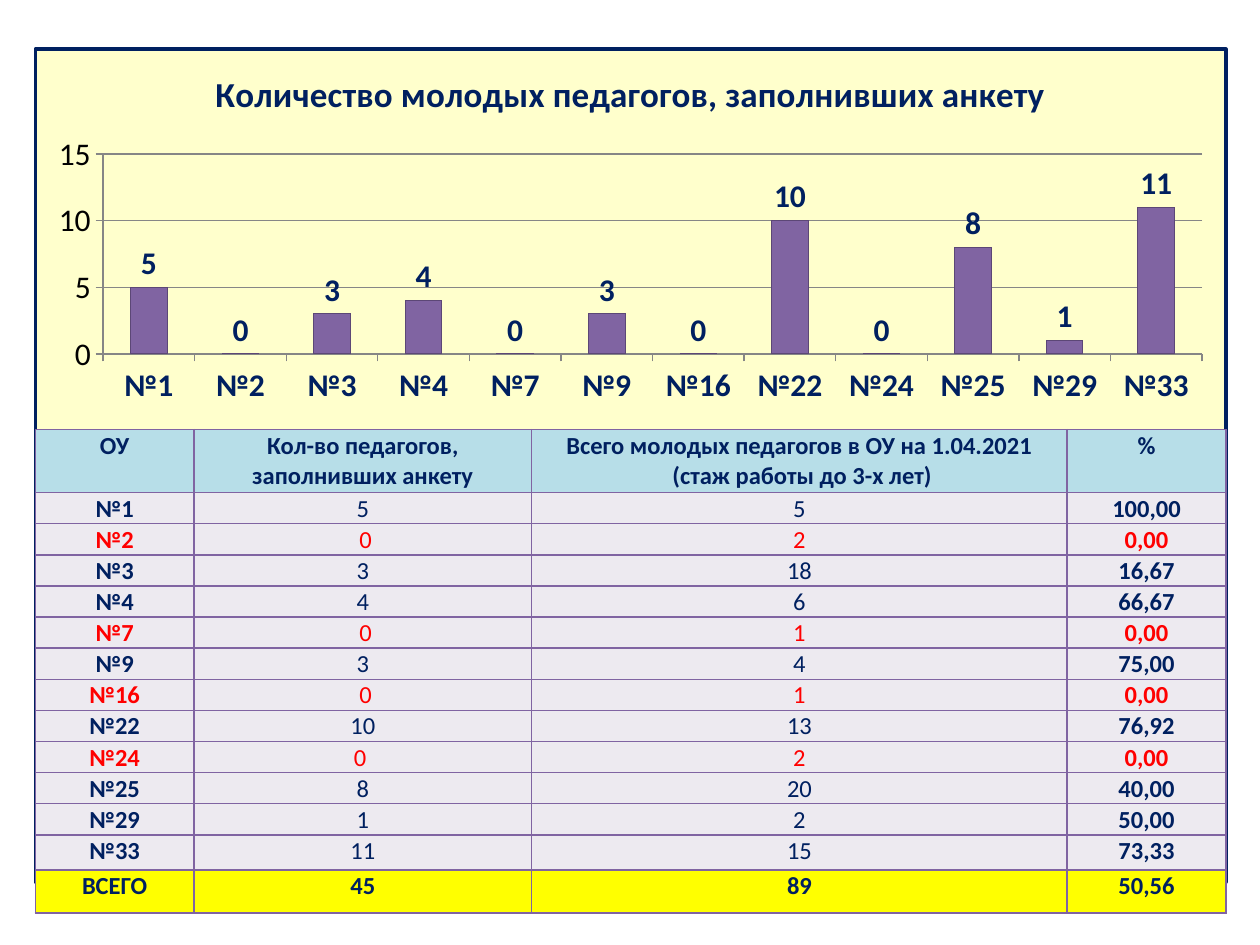
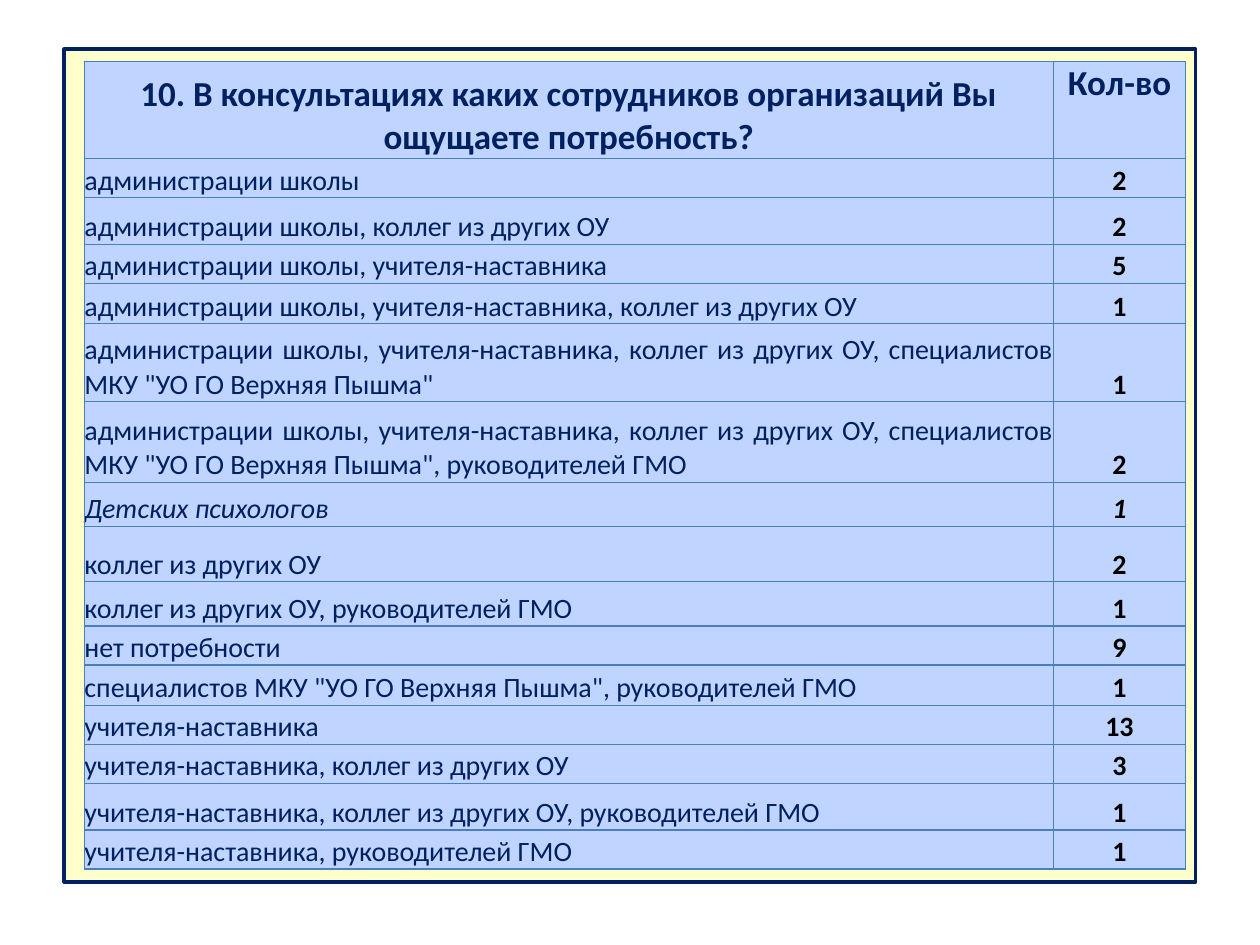
from lxml import etree
from pptx import Presentation
from pptx.chart.data import CategoryChartData
from pptx.dml.color import RGBColor
from pptx.enum import chart as charts, shapes, text
from pptx.oxml import ns
from pptx.util import Inches, Pt

FONT = "Calibri"
NAVY = RGBColor(0x00, 0x20, 0x60)
BLACK = RGBColor(0x00, 0x00, 0x00)
RED = RGBColor(0xFF, 0x00, 0x00)
CREAM = RGBColor(0xFF, 0xFF, 0xCC)
YELLOW = RGBColor(0xFF, 0xFF, 0x00)
HEADER_BLUE = RGBColor(0xB7, 0xDE, 0xE8)
PALE_LILAC = RGBColor(0xED, 0xEA, 0xF0)
PALE_BLUE = RGBColor(0xBF, 0xD5, 0xFF)
PURPLE = RGBColor(0x80, 0x64, 0xA2)
DARK_PURPLE = RGBColor(0x5C, 0x47, 0x76)
BORDER_BLUE = RGBColor(0x4B, 0x7E, 0xBC)
GRID_GREY = RGBColor(0x86, 0x86, 0x86)

CENTER = text.PP_ALIGN.CENTER
JUSTIFY = text.PP_ALIGN.JUSTIFY
TOP = text.MSO_ANCHOR.TOP
BOTTOM = text.MSO_ANCHOR.BOTTOM


def add_grid(page, left, top, widths, heights, border, border_width, inset):
    """Add a table with uniform borders and cell insets."""
    frame = page.shapes.add_table(
        len(heights), len(widths), Inches(left), Inches(top),
        Inches(sum(widths)), Inches(sum(heights)))
    table = frame.table
    table.first_row = table.horz_banding = False
    for column, width in zip(table.columns, widths):
        column.width = Inches(width)
    for row, height in zip(table.rows, heights):
        row.height = Inches(height)
    for cell in table.iter_cells():
        cell.margin_left = cell.margin_right = cell.margin_top = Inches(inset)
        cell.margin_bottom = 0
        properties = cell._tc.get_or_add_tcPr()
        for side in ("lnL", "lnR", "lnT", "lnB"):
            line = etree.SubElement(properties, ns.qn(f"a:{side}"), w=str(Pt(border_width)))
            solid = etree.SubElement(line, ns.qn("a:solidFill"))
            etree.SubElement(solid, ns.qn("a:srgbClr"), val=str(border))
    return table


def write_cell(cell, words, fill, size, color=NAVY, bold=False, italic=False,
               align=CENTER, anchor=TOP):
    cell.fill.solid()
    cell.fill.fore_color.rgb = fill
    cell.vertical_anchor = anchor
    for index, line in enumerate(words.split("\n")):
        paragraphs = cell.text_frame.paragraphs
        para = paragraphs[0] if index == 0 else cell.text_frame.add_paragraph()
        para.alignment = align
        span = para.add_run()
        span.text = line
        span.font.name = FONT
        span.font.size = Pt(size)
        span.font.bold = bold
        span.font.italic = italic
        span.font.color.rgb = color


deck = Presentation()
deck.slide_width, deck.slide_height = Inches(10), Inches(7.5)

# Both slides: cream panel with a navy frame
pages = []
for left, width in ((0.28, 9.45), (0.51, 8.98)):
    page = deck.slides.add_slide(deck.slide_layouts[6])
    panel = page.shapes.add_shape(
        shapes.MSO_SHAPE.RECTANGLE, Inches(left), Inches(0.39), Inches(width), Inches(6.61))
    panel.shadow.inherit = False
    panel.fill.solid()
    panel.fill.fore_color.rgb = CREAM
    panel.line.color.rgb = NAVY
    panel.line.width = Pt(2)
    pages.append(page)
survey_page, needs_page = pages

# Slide 1: schools table
schools = [
    ("№1", "5", "5", "100,00"),
    ("№2", " 0", "2", "0,00"),
    ("№3", "3", "18", "16,67"),
    ("№4", "4", "6", "66,67"),
    ("№7", " 0", "1", "0,00"),
    ("№9", "3", "4", "75,00"),
    ("№16", " 0", "1", "0,00"),
    ("№22", "10", "13", "76,92"),
    ("№24", "0 ", "2", "0,00"),
    ("№25", "8", "20", "40,00"),
    ("№29", "1", "2", "50,00"),
    ("№33", "11", "15", "73,33"),
]
headings = ("ОУ", "Кол-во педагогов, заполнивших анкету",
            "Всего молодых педагогов в ОУ на 1.04.2021\n (стаж работы до 3-х лет)", "%")
totals = ("ВСЕГО", "45", "89", "50,56")
school_table = add_grid(survey_page, 0.28, 3.41, (1.26, 2.68, 4.25, 1.26),
                        [0.5] + [0.24] * 11 + [0.28, 0.34], PURPLE, 1, 0.01)
for column in range(4):
    write_cell(school_table.cell(0, column), headings[column], HEADER_BLUE, 14, bold=True)
    write_cell(school_table.cell(13, column), totals[column], YELLOW, 14, bold=True)
    for row, school in enumerate(schools, 1):
        color = RED if school[3] == "0,00" else NAVY
        write_cell(school_table.cell(row, column), school[column], PALE_LILAC, 14, color,
                   bold=column in (0, 3))

# Slide 1: column chart of the same answers
answers = CategoryChartData()
answers.categories = [school[0] for school in schools]
answers.add_series("Series 1", [int(school[1].strip()) for school in schools])
chart = survey_page.shapes.add_chart(
    charts.XL_CHART_TYPE.COLUMN_CLUSTERED, Inches(0.28), Inches(0.39),
    Inches(9.45), Inches(2.87), answers).chart
chart.has_legend = False
chart.font.name = FONT
chart.font.size = Pt(18)
chart.font.color.rgb = BLACK

chart.has_title = True
span = chart.chart_title.text_frame.paragraphs[0].add_run()
span.text = "Количество молодых педагогов, заполнивших анкету"
span.font.name = FONT
span.font.size = Pt(20)
span.font.bold = True
span.font.color.rgb = NAVY
chart.chart_title.include_in_layout = False

school_axis, count_axis = chart.category_axis, chart.value_axis
count_axis.minimum_scale, count_axis.maximum_scale = 0, 15
count_axis.major_unit = 5
count_axis.major_gridlines.format.line.color.rgb = GRID_GREY
for axis in (school_axis, count_axis):
    axis.major_tick_mark = charts.XL_TICK_MARK.OUTSIDE
    axis.format.line.color.rgb = GRID_GREY
    axis.tick_labels.font.size = Pt(18)
school_axis.tick_labels.font.bold = True
school_axis.tick_labels.font.color.rgb = NAVY

plot = chart.plots[0]
plot.gap_width = 150
plot.vary_by_categories = False
bars = plot.series[0].format
bars.fill.solid()
bars.fill.fore_color.rgb = PURPLE
bars.line.color.rgb = DARK_PURPLE
plot.has_data_labels = True
labels = plot.data_labels
labels.show_value = True
labels.position = charts.XL_LABEL_POSITION.OUTSIDE_END
labels.font.size = Pt(18)
labels.font.bold = True
labels.font.color.rgb = NAVY

plot_area = chart._chartSpace.chart.plotArea
for old_layout in plot_area.findall(ns.qn("c:layout")):
    plot_area.remove(old_layout)
layout = etree.Element(ns.qn("c:layout"))
plot_area.insert(0, layout)
manual = etree.SubElement(layout, ns.qn("c:manualLayout"))
for tag, value in (("layoutTarget", "inner"), ("xMode", "edge"), ("yMode", "edge"),
                   ("x", "0.057"), ("y", "0.29"), ("w", "0.923"), ("h", "0.553")):
    etree.SubElement(manual, ns.qn(f"c:{tag}"), val=value)

# Slide 2: whose advice is needed (answer, count, row height)
needs = [
    ("администрации школы", 2, 0.31),
    ("администрации школы, коллег из других ОУ", 2, 0.37),
    ("администрации школы, учителя-наставника", 5, 0.31),
    ("администрации школы, учителя-наставника, коллег из других ОУ", 1, 0.32),
    ("администрации школы, учителя-наставника, коллег из других ОУ, "
     'специалистов МКУ "УО ГО Верхняя Пышма"', 1, 0.62),
    ("администрации школы, учителя-наставника, коллег из других ОУ, "
     'специалистов МКУ "УО ГО Верхняя Пышма", руководителей ГМО', 2, 0.64),
    ("Детских психологов", 1, 0.35),
    ("коллег из других ОУ", 2, 0.44),
    ("коллег из других ОУ, руководителей ГМО", 1, 0.35),
    ("нет потребности", 9, 0.31),
    ('специалистов МКУ "УО ГО Верхняя Пышма", руководителей ГМО', 1, 0.32),
    ("учителя-наставника", 13, 0.31),
    ("учителя-наставника, коллег из других ОУ", 3, 0.31),
    ("учителя-наставника, коллег из других ОУ, руководителей ГМО", 1, 0.37),
    ("учителя-наставника, руководителей ГМО", 1, 0.31),
]
needs_table = add_grid(needs_page, 0.67, 0.49, (7.69, 1.05),
                       [0.77] + [need[2] for need in needs], BORDER_BLUE, 0.75, 0)
write_cell(needs_table.cell(0, 0),
           "10. В консультациях каких сотрудников организаций Вы ощущаете потребность?",
           PALE_BLUE, 20, bold=True, anchor=BOTTOM)
write_cell(needs_table.cell(0, 1), "Кол-во", PALE_BLUE, 20, bold=True)
for row, (answer, count, _) in enumerate(needs, 1):
    italic = answer == "Детских психологов"
    write_cell(needs_table.cell(row, 0), answer, PALE_BLUE, 16, italic=italic,
               align=JUSTIFY, anchor=BOTTOM)
    write_cell(needs_table.cell(row, 1), str(count), PALE_BLUE, 16, BLACK, bold=True,
               italic=italic, anchor=BOTTOM)

deck.save("out.pptx")
